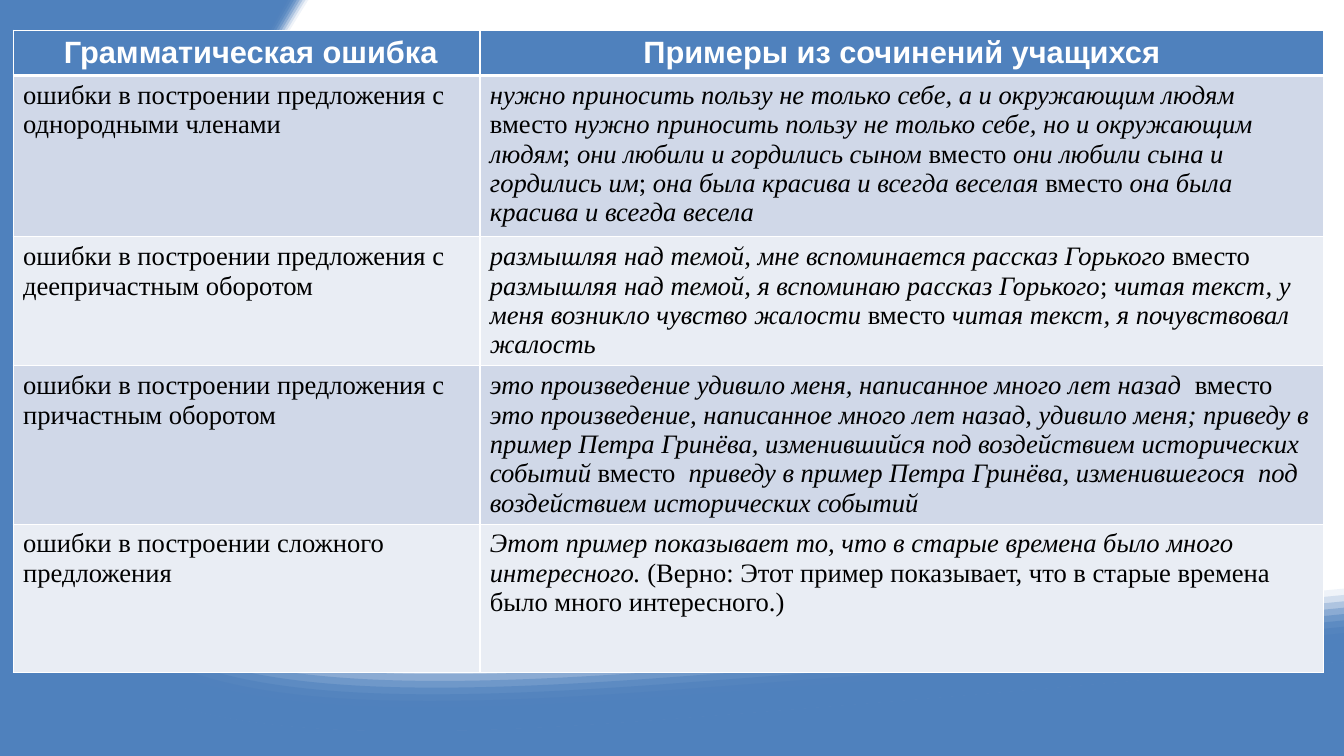
import dataclasses

import lxml.etree
import pptx
import pptx.dml.color
import pptx.enum.text
import pptx.oxml
import pptx.oxml.ns
import pptx.util

Inches = pptx.util.Inches
RGB = pptx.dml.color.RGBColor.from_string
qn = pptx.oxml.ns.qn


@dataclasses.dataclass(frozen=True)
class Theme:
    """Colours, fonts and type sizes of the slide."""
    blue: str = "4F81BD"
    bands: tuple = ("D0D8E8", "E9EDF4")
    white: str = "FFFFFF"
    black: str = "000000"
    heading_font: str = "Arial"
    body_font: str = "Times New Roman"
    heading_size: int = 22
    body_size: int = 19


THEME = Theme()
WIDTH, HEIGHT = 13.33, 7.5
WAVE_COUNT = 11

SHORE = [(13.33, 6.56), (13.33, 6.56), (10.75, 6.82), (6.55, 7.14), (1.06, 7.55),
         (-1.62, 7.12), (1.96, 1.15), (2.4, 0.41), (2.65, 0), (2.65, 0)]
OUTER_CREST = [(13.33, 5.84), (13.31, 5.84), (10.85, 6.09), (6.9, 6.38), (1.61, 6.78),
               (-0.73, 6.32), (2.4, 1.09), (2.81, 0.4), (3.05, 0.01), (3.06, 0)]
INNER_CREST = [(13.33, 6.47), (12.99, 6.51), (10.48, 6.75), (6.64, 7.04), (1.22, 7.45),
               (-1.42, 7.03), (2.11, 1.14), (2.48, 0.52), (2.71, 0.11), (2.77, 0)]

HEADINGS = (" Грамматическая ошибка", "Примеры из сочинений учащихся")
COLUMN_WIDTHS = (4.63, 8.37)
HEADING_HEIGHT = 0.45
ERRORS = [
    (1.6, "ошибки в построении предложения с однородными членами", (
        "нужно приносить пользу не только себе, а и окружающим людям", " вместо ",
        "нужно приносить пользу не только себе, но и окружающим людям", "; ",
        "они любили и гордились сыном", " вместо ",
        "они любили сына и гордились им", "; ",
        "она была красива и всегда веселая", " вместо ",
        "она была красива и всегда весела")),
    (1.28, "ошибки в построении предложения с деепричастным оборотом", (
        "размышляя над темой, мне вспоминается рассказ Горького", " вместо ",
        "размышляя над темой, я вспоминаю рассказ Горького", "; ",
        "читая текст, у меня возникло чувство жалости", " вместо ",
        "читая текст, я почувствовал жалость")),
    (1.57, "ошибки в построении предложения с причастным оборотом", (
        "это произведение удивило меня, написанное много лет назад", "  вместо ",
        "это произведение, написанное много лет назад, удивило меня; приведу в пример "
        "Петра Гринёва, изменившийся под воздействием исторических событий", " вместо  ",
        "приведу в пример Петра Гринёва, изменившегося  под воздействием "
        "исторических событий")),
    (1.47, "ошибки в построении сложного предложения", (
        "Этот пример показывает то, что в старые времена было много интересного. ",
        "(Верно: Этот пример показывает, что в старые времена было много интересного.)")),
]


def blend(start, end, share):
    """Return the edge that lies at a share of the way between two edges."""
    return [tuple(a + (b - a) * share for a, b in zip(p, q)) for p, q in zip(start, end)]


def add_step(outline, command, points):
    """Append one drawing command with its points to an outline."""
    step = lxml.etree.SubElement(outline, qn(f"a:{command}"))
    for x, y in points:
        lxml.etree.SubElement(step, qn("a:pt"), x=str(Inches(x)), y=str(Inches(y)))


def add_area(slide, box, edges, opacity=1):
    """Draw a blue area in the box, bounded by chains of cubic curves."""
    left, top, width, height = map(Inches, box)
    builder = slide.shapes.build_freeform(left, top, scale=1.0)
    builder.add_line_segments([(left + width, top), (left + width, top + height),
                               (left, top + height)])
    area = builder.convert_to_shape()
    outline = area._element.find(".//" + qn("a:path"))
    for step in list(outline):
        outline.remove(step)
    for order, edge in enumerate(edges):
        add_step(outline, "lnTo" if order else "moveTo", edge[:1])
        for first in range(1, len(edge), 3):
            add_step(outline, "cubicBezTo", edge[first:first + 3])
    add_step(outline, "close", [])
    area.shadow.inherit = False
    area.line.fill.background()
    area.fill.solid()
    area.fill.fore_color.rgb = RGB(THEME.blue)
    if opacity < 1:
        colour = area._element.spPr.find(qn("a:solidFill")).find(qn("a:srgbClr"))
        lxml.etree.SubElement(colour, qn("a:alpha"), val=str(round(opacity * 100000)))


def add_backdrop(slide, box):
    """Fill the box with the blue corner and its waves of growing opacity."""
    width, height = box[2:]
    add_area(slide, box, [SHORE, [(0, 0)], [(0, height)], [(width, height)]])
    for wave in range(WAVE_COUNT):
        crest = blend(OUTER_CREST, INNER_CREST, wave / (WAVE_COUNT - 1))
        add_area(slide, box, [SHORE, crest[::-1]], (wave + 1) / WAVE_COUNT)


def style_cell(cell, fill, bottom_width):
    """Give a cell its fill and white borders."""
    properties = cell._tc.get_or_add_tcPr()
    for side, points in (("L", 1), ("R", 1), ("T", 1), ("B", bottom_width)):
        properties.append(pptx.oxml.parse_xml(
            f'<a:ln{side} {pptx.oxml.ns.nsdecls("a")} w="{pptx.util.Pt(points)}"><a:solidFill>'
            f'<a:srgbClr val="{THEME.white}"/></a:solidFill></a:ln{side}>'))
    cell.fill.solid()
    cell.fill.fore_color.rgb = RGB(fill)


def write_run(paragraph, text, font, size, colour, bold=False, italic=False):
    """Add one formatted run to a paragraph."""
    run = paragraph.add_run()
    run.text = text
    run.font.name = font
    run.font.size = pptx.util.Pt(size)
    run.font.color.rgb = RGB(colour)
    run.font.bold = bold
    run.font.italic = italic


def add_error_table(slide, box):
    """Place the table of grammatical errors and examples in the box."""
    table = slide.shapes.add_table(len(ERRORS) + 1, len(HEADINGS), *map(Inches, box)).table
    table.horz_banding = False
    for column, width in zip(table.columns, COLUMN_WIDTHS):
        column.width = Inches(width)
    table.rows[0].height = Inches(HEADING_HEIGHT)
    for column, heading in enumerate(HEADINGS):
        cell = table.cell(0, column)
        style_cell(cell, THEME.blue, 3)
        paragraph = cell.text_frame.paragraphs[0]
        paragraph.alignment = pptx.enum.text.PP_ALIGN.CENTER
        write_run(paragraph, heading, THEME.heading_font, THEME.heading_size, THEME.white, bold=True)
    for row, (height, error, examples) in enumerate(ERRORS, 1):
        table.rows[row].height = Inches(height)
        example_runs = [(text, order % 2 == 0) for order, text in enumerate(examples)]
        for column, runs in enumerate(([(error, False)], example_runs)):
            cell = table.cell(row, column)
            style_cell(cell, THEME.bands[(row - 1) % 2], 1)
            for text, italic in runs:
                write_run(cell.text_frame.paragraphs[0], text, THEME.body_font,
                          THEME.body_size, THEME.black, italic=italic)


def main():
    """Build the slide and save it."""
    deck = pptx.Presentation()
    deck.slide_width, deck.slide_height = Inches(WIDTH), Inches(HEIGHT)
    slide = deck.slides.add_slide(deck.slide_layouts[6])
    add_backdrop(slide, (0, 0, WIDTH, HEIGHT))
    table_height = HEADING_HEIGHT + sum(error[0] for error in ERRORS)
    add_error_table(slide, (0.13, 0.3, sum(COLUMN_WIDTHS), table_height))
    deck.save("out.pptx")


if __name__ == "__main__":
    main()
